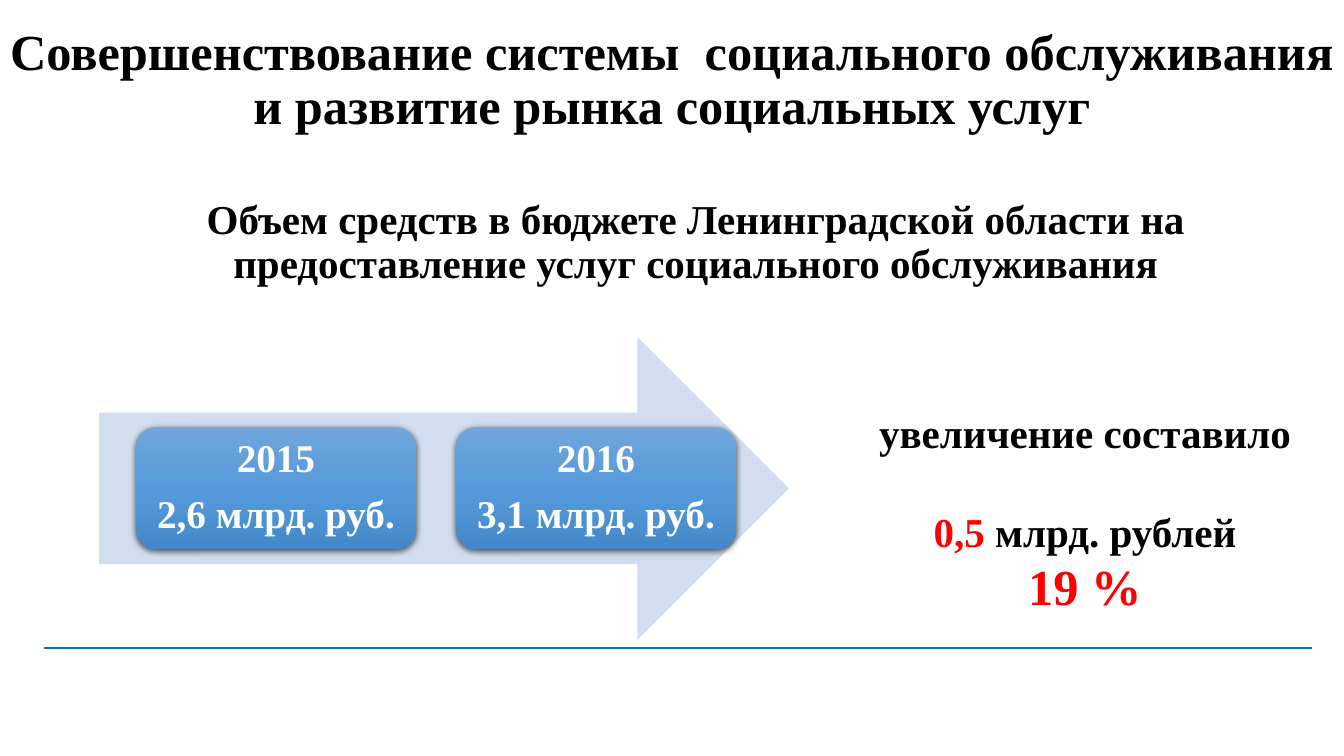
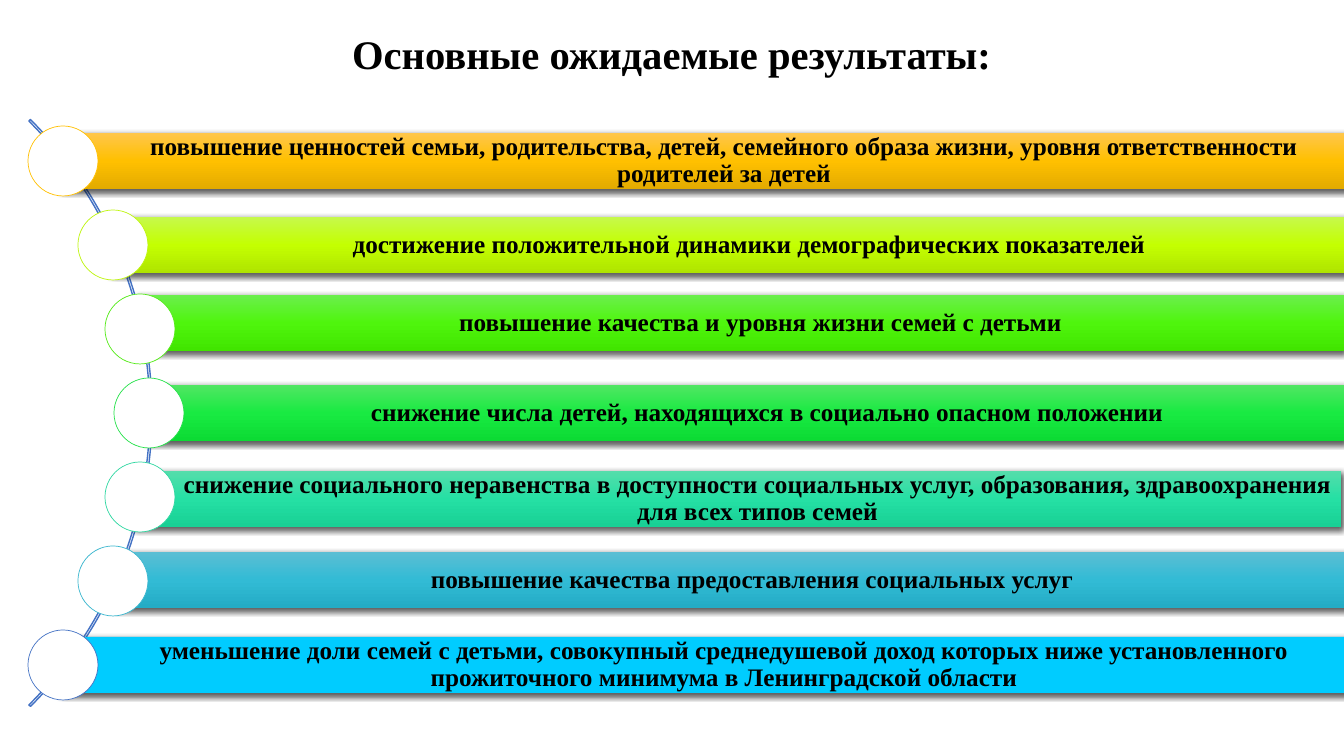
import math

import lxml.etree
import pptx
import pptx.dml.color
import pptx.enum.shapes
import pptx.enum.text
import pptx.oxml.ns
import pptx.util

SLIDE_W, SLIDE_H = 1344, 756
SCALE = 12192000 / SLIDE_W

COLORS = {
    "black": "000000", "white": "FFFFFF", "red": "FF0000",
    "arrow": "D2DEEF", "rule": "0070C0", "arc": "4472C4",
}
CARD_GRADIENT = ("71A6DB", "559BDB", "448ACA")

FRAME = {"word_wrap": True, "vertical_anchor": pptx.enum.text.MSO_ANCHOR.MIDDLE}
TOP_FRAME = {**FRAME, "vertical_anchor": pptx.enum.text.MSO_ANCHOR.TOP}
CENTERED = {"alignment": pptx.enum.text.PP_ALIGN.CENTER}
TIGHT = {**CENTERED, "line_spacing": 0.9}
FONT = {"name": "Times New Roman", "bold": True}
SHAPES = pptx.enum.shapes.MSO_SHAPE

# Text, fill (gradient or solid), circle outline, offset of the bar from the regular grid
RESULTS = [
    ("повышение ценностей семьи, родительства, детей, семейного образа жизни, "
     "уровня ответственности родителей за детей",
     ("FFC64B", "FFC000", "E3AB00"), "FFC000", (0, 0)),
    ("достижение положительной динамики демографических показателей",
     ("C6F94C", "C4FF01", "AFE400"), "BEF50C", (0, 0)),
    ("повышение качества и уровня жизни семей с детьми",
     ("6BEF4D", "4FF50D", "41E500"), "53EB17", (-2, -6)),
    ("снижение числа детей, находящихся в социально опасном положении",
     ("51E663", "19EA42", "0CDB34"), "23E148", (0, 0)),
    ("снижение социального неравенства в доступности социальных услуг, "
     "образования, здравоохранения для всех типов семей",
     ("55DDAB", "25E0A4", "18D095"), "2ED7A1", (-5, 2)),
    ("повышение качества предоставления социальных услуг",
     ("5BBED4", "32BBD5", "24ACC5"), "39B6CE", (3, -1)),
    ("уменьшение доли семей с детьми, совокупный среднедушевой доход которых "
     "ниже установленного прожиточного минимума в Ленинградской области",
     ("00CCFF",), "4472C4", (0, 0)),
]


def px(length):
    return pptx.util.Emu(round(length * SCALE))


def rgb(value):
    return pptx.dml.color.RGBColor.from_string(value)


def apply_format(target, values):
    for name, value in values.items():
        setattr(target, name, value)


def write_text(shape, lines, frame=FRAME, para_format=TIGHT, insets=(10, 5, 10, 5)):
    """Write lines of (text, size, colour) spans; a line may end with a dict of paragraph values."""
    text_frame = shape.text_frame
    apply_format(text_frame, frame)
    sides = ("margin_left", "margin_top", "margin_right", "margin_bottom")
    apply_format(text_frame, {side: px(inset) for side, inset in zip(sides, insets)})
    for index, (spans, extra) in enumerate(lines):
        para = text_frame.add_paragraph() if index else text_frame.paragraphs[0]
        apply_format(para, {**para_format, **extra})
        for text, size, color in spans:
            span = para.add_run()
            span.text = text
            apply_format(span.font, {**FONT, "size": pptx.util.Pt(size)})
            span.font.color.rgb = rgb(COLORS[color])


def add_text(page, box, lines, **options):
    write_text(page.shapes.add_textbox(*map(px, box)), lines, **options)


def add_title(page, text, size, height):
    add_text(page, (0, 18, SLIDE_W, height), [([(text, size, "black")], {})])


def add_shape(page, kind, box, colors=(), line=None, width=1):
    """Add a shape with no fill, one colour or an even vertical gradient."""
    shape = page.shapes.add_shape(kind, *map(px, box))
    shape.shadow.inherit = False
    if not colors:
        shape.fill.background()
    elif len(colors) == 1:
        shape.fill.solid()
        shape.fill.fore_color.rgb = rgb(colors[0])
    else:
        shape.fill.gradient()
        shape.fill.gradient_angle = 270
        qn = pptx.oxml.ns.qn
        stops = next(shape.element.iter(qn("a:gsLst")))
        for stop in list(stops):
            stops.remove(stop)
        for index, color in enumerate(colors):
            position = str(100000 * index // (len(colors) - 1))
            stop = lxml.etree.SubElement(stops, qn("a:gs"), pos=position)
            lxml.etree.SubElement(stop, qn("a:srgbClr"), val=color)
    if line:
        shape.line.color.rgb = rgb(line)
        shape.line.width = pptx.util.Pt(width)
    else:
        shape.line.fill.background()
    return shape


def add_shadow(shape):
    qn = pptx.oxml.ns.qn
    effects = next(shape.element.iter(qn("a:effectLst")))
    shadow = lxml.etree.SubElement(
        effects, qn("a:outerShdw"), blurRad="57150", dist="19050",
        dir="5400000", algn="ctr", rotWithShape="0")
    color = lxml.etree.SubElement(shadow, qn("a:srgbClr"), val=COLORS["black"])
    lxml.etree.SubElement(color, qn("a:alpha"), val="63000")


def add_rule(page, left, right, y):
    rule = page.shapes.add_connector(
        pptx.enum.shapes.MSO_CONNECTOR.STRAIGHT, *map(px, (left, y, right, y)))
    rule.line.color.rgb = rgb(COLORS["rule"])
    rule.line.width = pptx.util.Pt(1)
    lxml.etree.SubElement(rule.element.spPr, pptx.oxml.ns.qn("a:effectLst"))


def add_growth_arrow(page, box, cards):
    left, top, _, height = box
    add_shape(page, SHAPES.RIGHT_ARROW, box, (COLORS["arrow"],))
    card_w, card_h, gap = 280, 122, 40
    for index, (year, amount) in enumerate(cards):
        card_box = (left + 37 + index * (card_w + gap),
                    top + (height - card_h) // 2, card_w, card_h)
        card = add_shape(page, SHAPES.ROUNDED_RECTANGLE, card_box, CARD_GRADIENT)
        add_shadow(card)
        write_text(card, [
            ([(year, 28, "white")], {"space_after": pptx.util.Pt(10)}),
            ([(amount, 28, "white")], {}),
        ], insets=(8, 8, 8, 8))


def add_result_list(page, box, results):
    """Place bars whose circles sit on an arc bulging to the right."""
    left, top, width, height = box
    pitch, circle, bar_h, radius = 84, 70, 56, 412
    center_x, center_y = left - 290, top + height // 2
    arc = add_shape(page, SHAPES.BLOCK_ARC,
                    (center_x - radius - 3, center_y - radius - 3,
                     2 * radius + 6, 2 * radius + 6), line=COLORS["arc"])
    for index, value in enumerate((189, 27, 0.0026)):
        arc.adjustments[index] = value
    for index, (text, colors, outline, (shift_x, shift_y)) in enumerate(results):
        offset = round((index - (len(results) - 1) / 2) * pitch)
        x = center_x + round(math.sqrt(radius ** 2 - offset ** 2))
        y = center_y + offset
        bar = add_shape(page, SHAPES.RECTANGLE,
                        (x + shift_x, y - bar_h // 2 + shift_y,
                         left + width - x, bar_h), colors)
        add_shadow(bar)
        write_text(bar, [([(text, 18, "black")], {})], insets=(44, 5, 5, 5))
        add_shape(page, SHAPES.OVAL,
                  (x - circle // 2, y - circle // 2, circle, circle),
                  (COLORS["white"],), outline, 0.5)


def build_budget_slide(page):
    add_title(page, "Совершенствование системы  социального обслуживания "
                    "и развитие рынка социальных услуг", 36, 126)
    add_growth_arrow(page, (99, 337, 690, 303),
                     [("2015", "2,6 млрд. руб."), ("2016", "3,1 млрд. руб.")])
    add_text(page, (71, 194, 1249, 119), [
        ([("Объем средств в бюджете Ленинградской области на предоставление "
           "услуг социального обслуживания", 29.3, "black")], {}),
    ], frame=TOP_FRAME)
    add_text(page, (868, 403, 434, 212), [
        ([("увеличение составило", 29.3, "black")], {}),
        ([("0,5", 29.3, "red"), (" млрд. рублей", 29.3, "black")],
         {"space_before": pptx.util.Pt(35)}),
        ([("19 %", 36, "red")], {}),
    ], frame=TOP_FRAME, para_format=CENTERED, insets=(5, 5, 5, 5))
    add_rule(page, 44, 1312, 648)


def build_results_slide(page):
    add_title(page, "Основные ожидаемые результаты:", 29, 76)
    add_result_list(page, (27, 119, 1319, 588), RESULTS)


def main():
    deck = pptx.Presentation()
    deck.slide_width, deck.slide_height = px(SLIDE_W), px(SLIDE_H)
    for build in (build_budget_slide, build_results_slide):
        build(deck.slides.add_slide(deck.slide_layouts[6]))
    deck.save("out.pptx")


if __name__ == "__main__":
    main()
